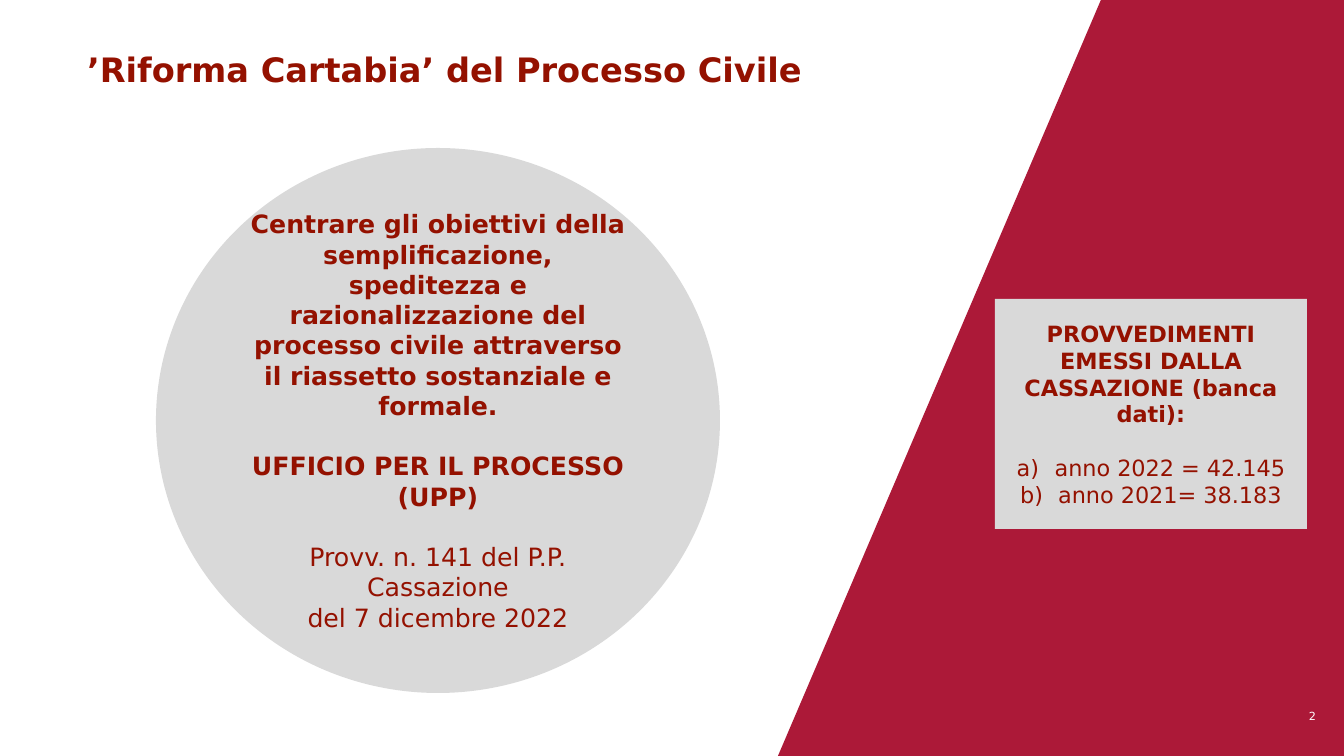
from pptx import Presentation, util as u
from pptx.dml.color import RGBColor
from pptx.enum import shapes, text
from pptx.oxml.ns import qn
from lxml import etree

PX = u.Inches(1) / 100.8
FONT = "DejaVu Sans"
HUES = {"band": "AC1938", "ink": "941100", "panel": "D9D9D9", "page": "FFFFFF"}


def px(n):
    return u.Emu(round(n * PX))


def hue(name):
    return RGBColor.from_string(HUES[name])


def paint(shape, name):
    shape.shadow.inherit = False
    shape.fill.solid()
    shape.fill.fore_color.rgb = hue(name)
    shape.line.fill.background()


def style(para, size, bold=False, ink="ink", align=text.PP_ALIGN.CENTER):
    para.alignment = align
    para.line_spacing = u.Pt(size * 1.2)
    for run in para.runs:
        font = run.font
        font.name, font.size, font.bold = FONT, u.Pt(size), bold
        font.color.rgb = hue(ink)


def number(para):
    props = para._p.get_or_add_pPr()
    props.set("marL", str(px(38)))
    props.set("indent", str(-px(38)))
    face = etree.SubElement(props, qn("a:buFont"))
    face.set("typeface", FONT)
    mark = etree.SubElement(props, qn("a:buAutoNum"))
    mark.set("type", "alphaLcParenR")


def add_band(slide, left, top, width, height, slant):
    right, base = left + width, top + height
    pen = slide.shapes.build_freeform(px(left + slant), px(top), scale=1.0)
    points = [(right, top), (right, base), (left, base)]
    pen.add_line_segments([(px(x), px(y)) for x, y in points], close=True)
    paint(pen.convert_to_shape(), "band")


def add_title(slide, words, left, top, width, height):
    title = slide.shapes.title
    title.left, title.top = px(left), px(top)
    title.width, title.height = px(width), px(height)
    frame = title.text_frame
    frame.text = words
    frame.word_wrap = True
    frame.auto_size = text.MSO_AUTO_SIZE.NONE
    frame.vertical_anchor = text.MSO_ANCHOR.TOP
    style(frame.paragraphs[0], 24, True, align=text.PP_ALIGN.JUSTIFY)


def add_panel(slide, kind, box, size, lines):
    panel = slide.shapes.add_shape(kind, *map(px, box))
    paint(panel, "panel")
    frame = panel.text_frame
    frame.word_wrap = True
    frame.vertical_anchor = text.MSO_ANCHOR.MIDDLE
    frame.text = "\n".join(words for words, *_ in lines)
    for para, (_, bold, gap, listed) in zip(frame.paragraphs, lines):
        if listed:
            number(para)
        style(para, size, bold)
        if gap:
            para.space_before = u.Pt(size * 1.2)


def add_page(slide, words, left, top, width, height):
    box = slide.shapes.add_textbox(px(left), px(top), px(width), px(height))
    frame = box.text_frame
    frame.word_wrap = False
    frame.text = words
    style(frame.paragraphs[0], 8, ink="page", align=text.PP_ALIGN.RIGHT)


def main():
    deck = Presentation()
    deck.slide_width, deck.slide_height = px(1344), px(756)
    slide = deck.slides.add_slide(deck.slide_layouts[5])
    add_band(slide, 778, 0, 566, 756, 323)
    add_title(slide, "’Riforma Cartabia’ del Processo Civile", 77, 44, 969, 50)
    goals = [
        ("Centrare gli obiettivi della semplificazione, speditezza e "
         "razionalizzazione del processo civile attraverso il riassetto "
         "sostanziale e formale.", True, False, False),
        ("UFFICIO PER IL PROCESSO (UPP)", True, True, False),
        ("Provv. n. 141 del P.P. Cassazione", False, True, False),
        ("del 7 dicembre 2022", False, False, False),
    ]
    add_panel(slide, shapes.MSO_SHAPE.OVAL, (156, 148, 564, 545), 18, goals)
    counts = [
        ("PROVVEDIMENTI EMESSI DALLA CASSAZIONE (banca dati):", True, False, False),
        ("anno 2022 = 42.145", False, True, True),
        ("anno 2021= 38.183", False, False, True),
    ]
    add_panel(slide, shapes.MSO_SHAPE.RECTANGLE, (995, 299, 312, 230), 16, counts)
    add_page(slide, "2", 1299, 704, 27, 24)
    deck.save("out.pptx")


if __name__ == "__main__":
    main()
